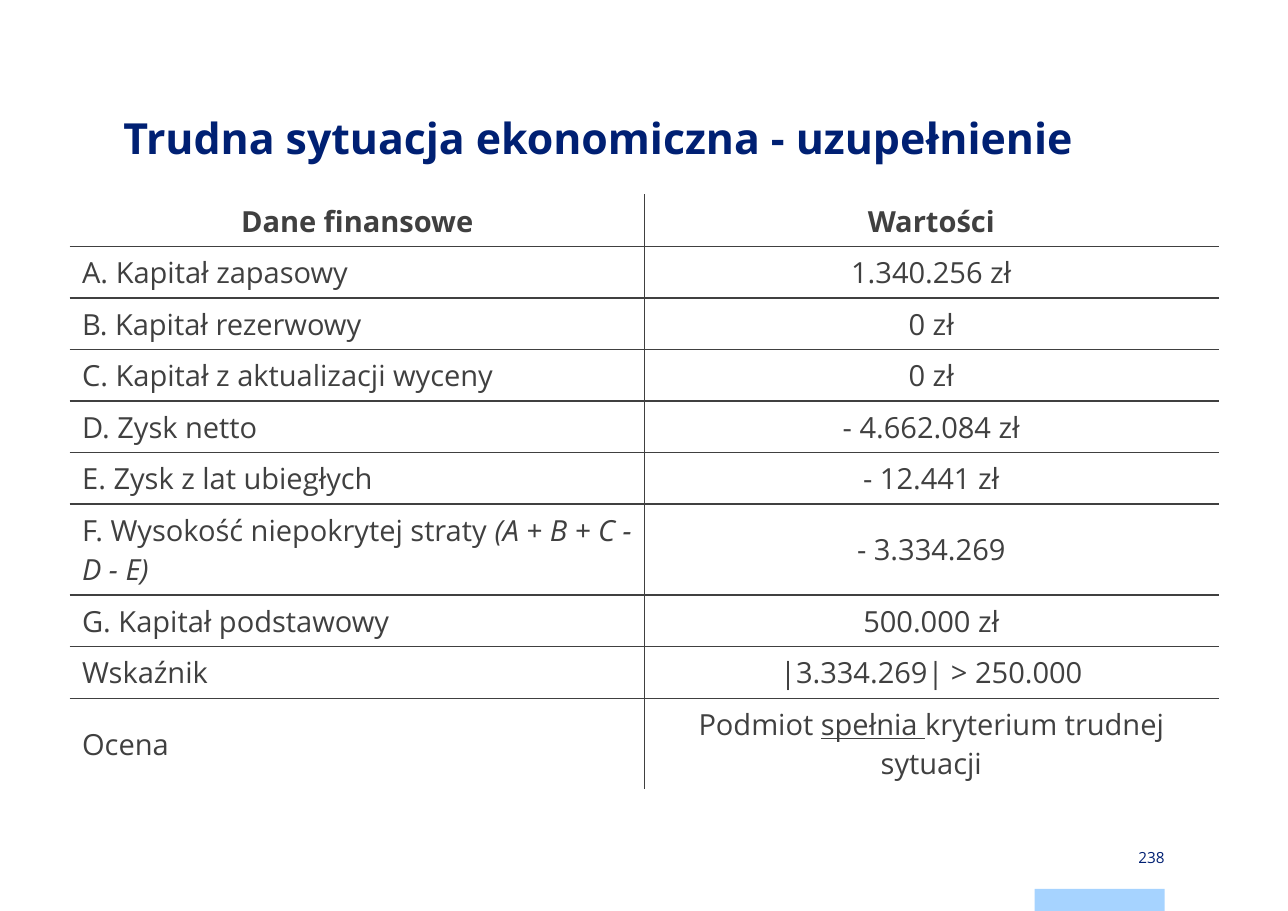
"""Build the slide with the financial table on a difficult economic situation."""
from dataclasses import dataclass, field

from lxml import etree
from pptx import Presentation
from pptx import util as u
from pptx.dml.color import RGBColor
from pptx.enum import shapes, text
from pptx.oxml import ns


@dataclass(frozen=True)
class Theme:
    font: str = "Open Sans"
    navy: str = "002073"
    grey: str = "404040"
    sky: str = "A6D3FF"
    title_size: float = 28
    table_size: float = 19
    number_size: float = 10
    rule: float = 1


@dataclass(frozen=True)
class Box:
    left: float
    top: float
    width: float
    height: float

    def lengths(self) -> list[u.Length]:
        return [u.Pt(v) for v in (self.left, self.top, self.width, self.height)]


@dataclass(frozen=True)
class Part:
    text: str
    style: dict = field(default_factory=dict)


@dataclass(frozen=True)
class Row:
    label: list[Part]
    value: list[Part]
    height: float = 33.7


THEME = Theme()
SLIDE = (841.68, 595.44)
TITLE = Box(80.64, 70.56, 680.4, 84.96)
TABLE = Box(45.9, 127.44, 750.24, 388.6)
NUMBER = Box(676.08, 552.96, 84.96, 14.4)
STRIPE = Box(676.08, 581.04, 84.96, 14.4)
TALL = 59.5
LEFT, CENTER, RIGHT = (text.PP_ALIGN.LEFT, text.PP_ALIGN.CENTER, text.PP_ALIGN.RIGHT)
MIDDLE = text.MSO_ANCHOR.MIDDLE
BOLD, ITALIC, UNDERLINE = {"bold": True}, {"italic": True}, {"underline": True}

ROWS = [
    Row([Part("Dane finansowe", BOLD)], [Part("Wartości", BOLD)]),
    Row([Part("A. Kapitał zapasowy")], [Part("1.340.256 zł")]),
    Row([Part("B. Kapitał rezerwowy")], [Part("0 zł")]),
    Row([Part("C. Kapitał z aktualizacji wyceny")], [Part("0 zł")]),
    Row([Part("D. Zysk netto")], [Part("- 4.662.084 zł")]),
    Row([Part("E. Zysk z lat ubiegłych")], [Part("- 12.441 zł")]),
    Row([Part("F. Wysokość niepokrytej straty "), Part("(A + B + C - D - E)", ITALIC)],
        [Part("- 3.334.269")], TALL),
    Row([Part("G. Kapitał podstawowy")], [Part("500.000 zł")]),
    Row([Part("Wskaźnik")], [Part("|3.334.269| > 250.000")]),
    Row([Part("Ocena")],
        [Part("Podmiot "), Part("spełnia ", UNDERLINE), Part("kryterium trudnej sytuacji")], TALL),
]


def set_all(target: object, values: dict) -> None:
    for name, value in values.items():
        setattr(target, name, value)


def write(p, parts: list[Part], size: float, color: str, **layout) -> None:
    set_all(p, layout)
    for part in parts:
        r = p.add_run()
        r.text = part.text
        set_all(r.font, {"name": THEME.font, "size": u.Pt(size), **part.style})
        r.font.color.rgb = RGBColor.from_string(color)


def add_text(sl, box: Box, part: Part, size: float, frame: dict, **layout) -> None:
    tf = sl.shapes.add_textbox(*box.lengths()).text_frame
    set_all(tf, {"word_wrap": True, "margin_left": 0, "margin_right": 0, **frame})
    write(tf.paragraphs[0], [part], size, THEME.navy, **layout)


def add_borders(cell, sides: list[str]) -> None:
    tc_pr = cell.fill._xPr
    for i, side in enumerate(sides):
        ln = etree.Element(ns.qn(f"a:ln{side}"), w=str(u.Pt(THEME.rule)))
        fill = etree.SubElement(ln, ns.qn("a:solidFill"))
        etree.SubElement(fill, ns.qn("a:srgbClr"), val=THEME.grey)
        tc_pr.insert(i, ln)


def add_finance_table(sl, box: Box, rows: list[Row]) -> None:
    table = sl.shapes.add_table(len(rows), 2, *box.lengths()).table
    set_all(table, {"first_row": False, "horz_banding": False})
    for column in table.columns:
        column.width = u.Pt(box.width / 2)
    for i, row in enumerate(rows):
        table.rows[i].height = u.Pt(row.height)
        for j, parts in enumerate((row.label, row.value)):
            cell = table.cell(i, j)
            set_all(cell, {"vertical_anchor": MIDDLE,
                           "margin_left": u.Pt(7.8), "margin_right": u.Pt(7.8),
                           "margin_top": u.Pt(3.9), "margin_bottom": u.Pt(3.9)})
            cell.fill.background()
            sides = ["L" if j else "R"]
            if i > 0:
                sides.append("T")
            if i < len(rows) - 1:
                sides.append("B")
            add_borders(cell, sides)
            write(cell.text_frame.paragraphs[0], parts, THEME.table_size, THEME.grey,
                  alignment=CENTER if i == 0 or j == 1 else LEFT)


def add_stripe(sl, box: Box) -> None:
    sp = sl.shapes.add_shape(shapes.MSO_SHAPE.RECTANGLE, *box.lengths())
    sp.shadow.inherit = False
    sp.fill.solid()
    sp.fill.fore_color.rgb = RGBColor.from_string(THEME.sky)
    sp.line.fill.background()


def main() -> None:
    prs = Presentation()
    prs.slide_width, prs.slide_height = (u.Pt(v) for v in SLIDE)
    sl = prs.slides.add_slide(prs.slide_layouts[6])
    add_stripe(sl, STRIPE)
    add_text(sl, TITLE, Part("Trudna sytuacja ekonomiczna - uzupełnienie", BOLD),
             THEME.title_size, {"margin_top": 0, "margin_bottom": 0}, line_spacing=u.Pt(36))
    add_finance_table(sl, TABLE, ROWS)
    add_text(sl, NUMBER, Part("238"), THEME.number_size,
             {"margin_top": u.Pt(5.76), "margin_bottom": u.Pt(5.76), "vertical_anchor": MIDDLE},
             alignment=RIGHT)
    prs.save("out.pptx")


if __name__ == "__main__":
    main()
